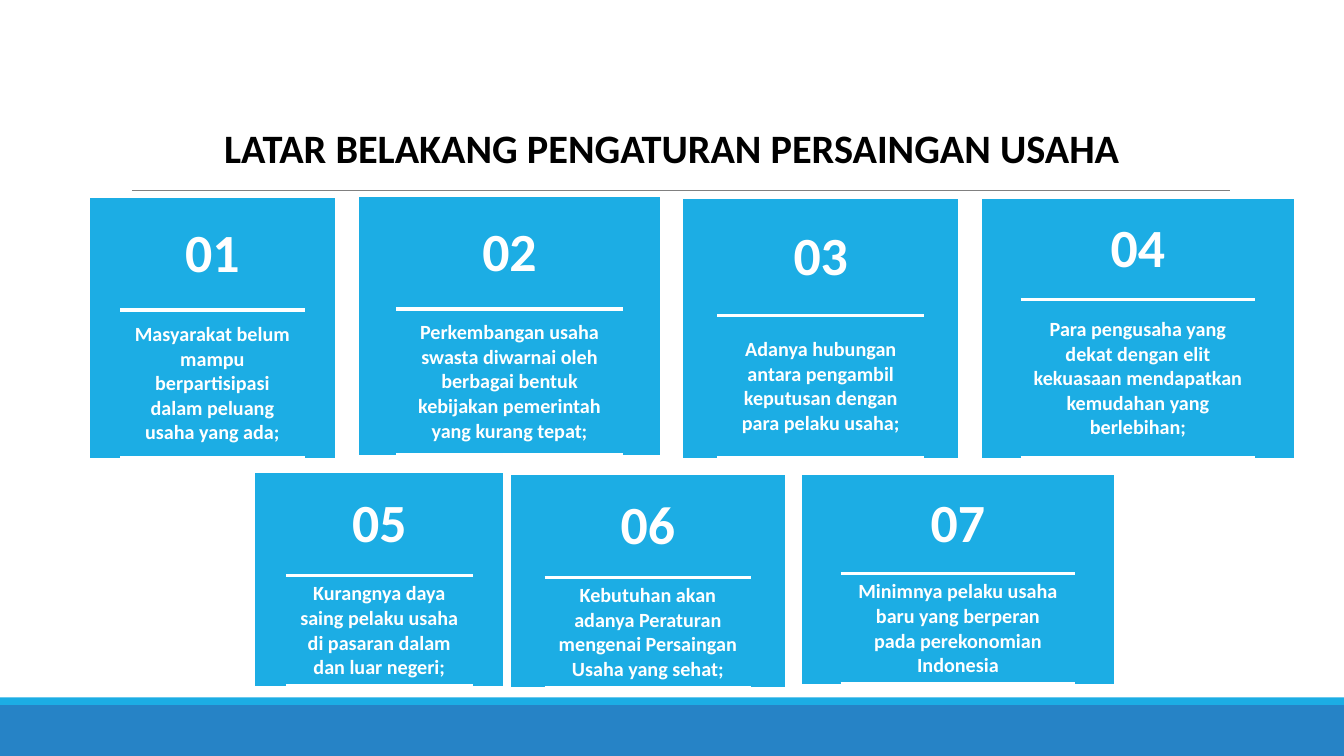
"""Build a slide of seven numbered cards on the background of competition rules."""
from dataclasses import dataclass

from lxml.etree import SubElement
from pptx import Presentation
from pptx.dml.color import RGBColor
from pptx.enum.shapes import MSO_CONNECTOR, MSO_SHAPE
from pptx.enum.text import MSO_ANCHOR, MSO_AUTO_SIZE, PP_ALIGN
from pptx.oxml import parse_xml
from pptx.oxml.ns import nsdecls, qn
from pptx.util import Cm, Pt

PAGE_WIDTH, PAGE_HEIGHT = 28.22, 15.88
SKY, BLUE, GRAY, WHITE, BLACK = "1CADE4", "2683C6", "808080", "FFFFFF", "000000"
SIDE_SHARE = 0.124
PLAIN_TABLE_STYLE = "{2D5ABB26-0587-4C30-8999-92F81FD0307C}"
CELL_FORMAT = {
    "margin_left": Cm(0.27),
    "margin_right": Cm(0.27),
    "margin_top": Cm(0.13),
    "margin_bottom": Cm(0.13),
    "vertical_anchor": MSO_ANCHOR.MIDDLE,
}


@dataclass
class Card:
    """A numbered card, with lengths in centimetres."""
    number: str
    reason: str
    left: float
    top: float
    width: float
    number_height: float
    reason_height: float


@dataclass
class Band:
    """A full-width footer band, with lengths in centimetres."""
    top: float
    height: float
    color: str


CARDS = [
    Card("01", "Masyarakat belum mampu berpartisipasi dalam peluang usaha yang ada;",
         1.88, 4.15, 5.16, 2.36, 3.1),
    Card("02", "Perkembangan usaha swasta diwarnai oleh berbagai bentuk kebijakan "
         "pemerintah yang kurang tepat;", 7.54, 4.13, 6.32, 2.36, 3.07),
    Card("03", "Adanya hubungan antara pengambil keputusan dengan para pelaku usaha;",
         14.35, 4.18, 5.77, 2.44, 3),
    Card("04", "Para pengusaha yang dekat dengan elit kekuasaan mendapatkan kemudahan "
         "yang berlebihan;", 20.62, 4.18, 6.55, 2.11, 3.33),
    Card("05", "Kurangnya daya saing pelaku usaha di pasaran dalam dan luar negeri;",
         5.36, 9.93, 5.21, 2.16, 2.31),
    Card("06", "Kebutuhan akan adanya Peraturan mengenai Persaingan Usaha yang sehat;",
         10.72, 9.97, 5.77, 2.16, 2.31),
    Card("07", "Minimnya pelaku usaha baru yang berperan pada perekonomian Indonesia",
         16.84, 9.97, 6.55, 2.08, 2.31),
]
BANDS = [Band(14.81, 1.07, BLUE), Band(14.65, 0.16, SKY)]


def rgb(color: str) -> RGBColor:
    """Turn a hex string into a colour."""
    return RGBColor.from_string(color)


def apply_format(target, values: dict) -> None:
    """Set each named attribute on the target."""
    for name, value in values.items():
        setattr(target, name, value)


def write_text(frame, text: str, size: float, color: str) -> None:
    """Write one centred bold paragraph."""
    para = frame.paragraphs[0]
    para.alignment = PP_ALIGN.CENTER
    span = para.add_run()
    span.text = text
    apply_format(span.font, {"name": "Calibri", "size": Pt(size), "bold": True})
    span.font.color.rgb = rgb(color)


def add_border(cell, edge: str) -> None:
    """Draw a white rule on one edge of a cell."""
    border = parse_xml(
        f'<a:{edge} {nsdecls("a")} w="{Pt(2.25)}"><a:solidFill>'
        f'<a:srgbClr val="{WHITE}"/></a:solidFill></a:{edge}>')
    cell._tc.get_or_add_tcPr().insert(0, border)


def add_band(page, band: Band) -> None:
    """Draw a footer band."""
    shape = page.shapes.add_shape(
        MSO_SHAPE.RECTANGLE, 0, Cm(band.top), Cm(PAGE_WIDTH), Cm(band.height))
    shape.shadow.inherit = False
    shape.fill.solid()
    shape.fill.fore_color.rgb = rgb(band.color)
    shape.line.fill.background()


def add_title(page) -> None:
    """Draw the title and the rule under it."""
    rule = page.shapes.add_connector(
        MSO_CONNECTOR.STRAIGHT, Cm(2.77), Cm(4.01), Cm(25.83), Cm(4.01))
    rule.line.color.rgb = rgb(GRAY)
    rule.line.width = Pt(0.5)
    SubElement(rule._element.spPr, qn("a:effectLst"))
    box = page.shapes.add_textbox(Cm(3.53), Cm(2.46), Cm(21.16), Cm(1.27))
    apply_format(box.text_frame, {
        "word_wrap": True, "auto_size": MSO_AUTO_SIZE.SHAPE_TO_FIT_TEXT})
    write_text(box.text_frame, "LATAR BELAKANG PENGATURAN PERSAINGAN USAHA", 24, BLACK)


def add_card(page, card: Card) -> None:
    """Draw a card as a table with the text in its middle column."""
    heights = [card.number_height, card.reason_height]
    frame = page.shapes.add_table(
        2, 3, Cm(card.left), Cm(card.top), Cm(card.width), Cm(sum(heights)))
    table = frame.table
    apply_format(table, {"first_row": False, "horz_banding": False})
    for style in frame._element.iter(qn("a:tableStyleId")):
        style.text = PLAIN_TABLE_STYLE
    shares = [SIDE_SHARE, 1 - 2 * SIDE_SHARE, SIDE_SHARE]
    for column, share in zip(table.columns, shares):
        column.width = Cm(card.width * share)
    for row, height in zip(table.rows, heights):
        row.height = Cm(height)
    for cell in table.iter_cells():
        apply_format(cell, CELL_FORMAT)
        cell.fill.solid()
        cell.fill.fore_color.rgb = rgb(SKY)
    number_cell, reason_cell = table.cell(0, 1), table.cell(1, 1)
    write_text(number_cell.text_frame, card.number, 32, WHITE)
    write_text(reason_cell.text_frame, card.reason, 12, WHITE)
    add_border(number_cell, "lnB")
    for edge in ("lnB", "lnT"):
        add_border(reason_cell, edge)


def main() -> None:
    """Build and save the deck."""
    deck = Presentation()
    apply_format(deck, {"slide_width": Cm(PAGE_WIDTH), "slide_height": Cm(PAGE_HEIGHT)})
    page = deck.slides.add_slide(deck.slide_layouts[6])
    for band in BANDS:
        add_band(page, band)
    add_title(page)
    for card in CARDS:
        add_card(page, card)
    deck.save("out.pptx")


if __name__ == "__main__":
    main()
